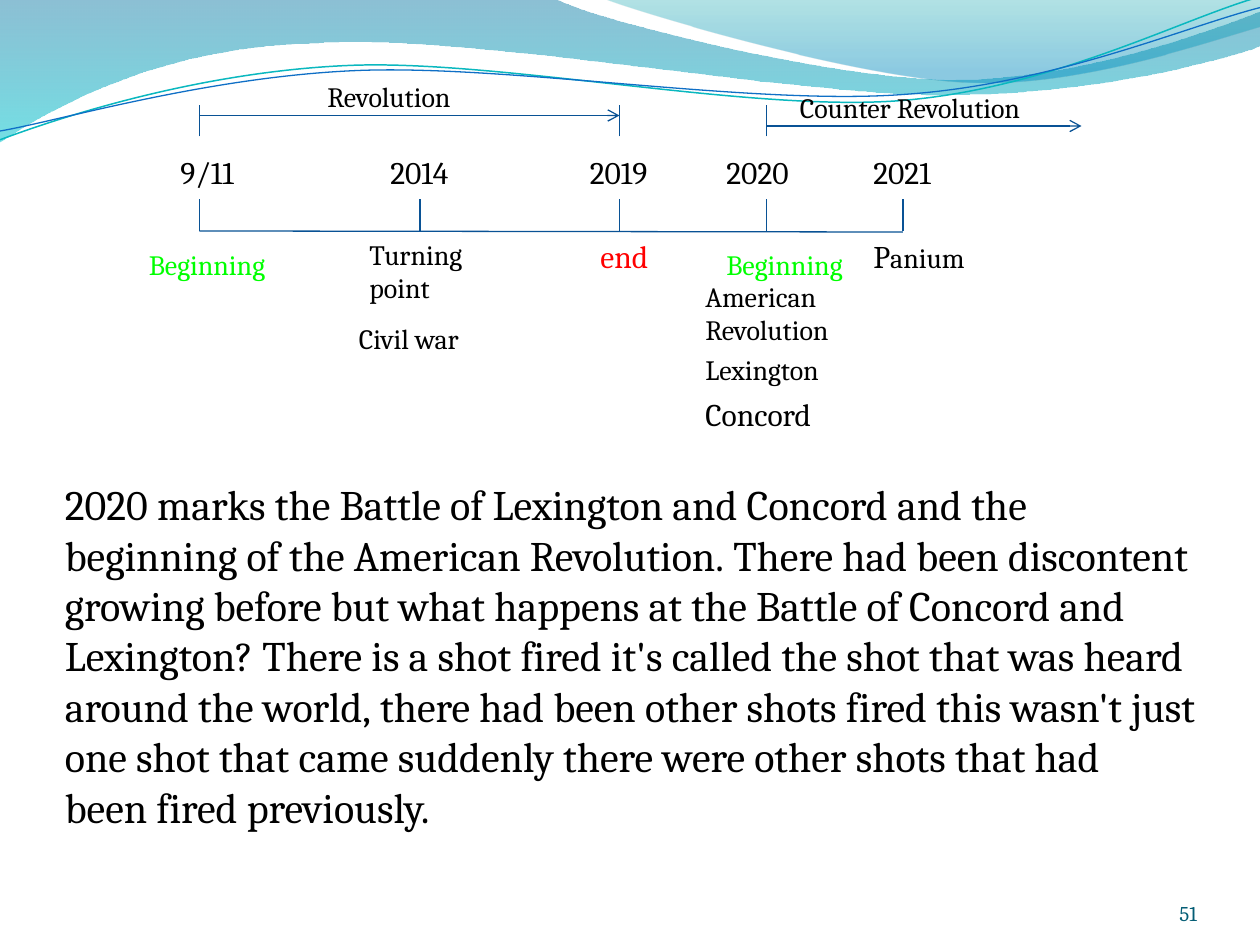
import dataclasses
import math
import pptx
import pptx.util
import pptx.dml.color
import pptx.enum.text
import pptx.oxml
import pptx.oxml.ns
import lxml.etree


@dataclasses.dataclass(frozen=True)
class Theme:
    font: str = "Cambria"
    ink: str = "000000"
    start: str = "00FF00"
    end: str = "FF0000"
    rule: str = "095295"
    number: str = "045D75"
    small: int = 16
    medium: int = 18
    body: int = 24
    footer: int = 12


THEME = Theme()
ALIGN = pptx.enum.text.PP_ALIGN
ANCHOR = pptx.enum.text.MSO_ANCHOR
AUTO = pptx.enum.text.MSO_AUTO_SIZE

# Timeline columns; the grid is 120 columns by 90 rows
ATTACK, TURN, FINISH, RESTART, PANIUM = 19, 40, 59, 73, 86
AXIS = 22
TICK = 3

# Wave paths in inches: start, then lines (1 point) and curves (3 points)
UPPER_WAVE = [[(0, 0)], [(4.4, -0.01)],
              [(4.76, 0.17), (6.64, 0.63), (7.58, 0.63)],
              [(8.53, 0.63), (9.58, 0.26), (10, 0.09)], [(10.01, 0.36)],
              [(9.83, 0.44), (8.7, 0.76), (7.46, 0.75)],
              [(6.22, 0.75), (3.82, 0.28), (2.57, 0.34)],
              [(1.29, 0.36), (0.46, 0.83), (-0.01, 1.13)], [(0, 0)]]
RIGHT_WAVE = [[(4.79, -0.01)], [(5.09, 0.11), (6.82, 0.62), (7.69, 0.65)],
              [(8.56, 0.69), (9.61, 0.32), (10, 0.21)], [(10, 0)],
              [(4.79, -0.01)]]
TEAL_CURVE = [[(0, 1.11)], [(0.48, 0.93), (1.58, 0.57), (2.77, 0.52)],
              [(3.95, 0.47), (5.93, 0.89), (7.13, 0.8)],
              [(8.33, 0.71), (9.38, 0.15), (9.98, -0.02)]]
BLUE_CURVE = [[(0, 1.04)], [(0.47, 0.96), (1.64, 0.61), (2.83, 0.56)],
              [(4.03, 0.51), (5.97, 0.84), (7.17, 0.75)],
              [(8.36, 0.67), (9.41, 0.21), (10, 0.06)]]
CURVE_TILT = -2.7

# A tilde marks a space that does not break
STORY = (
    "2020 marks the Battle of~Lexington and Concord and the "
    "beginning~of the American Revolution.~There had been discontent "
    "growing before~but what happens at the Battle of Concord and "
    "Lexington? There is a shot~fired~it's~called the shot that "
    "was~heard around the world,~there had been other shots fired "
    "this~wasn't~just one shot that came suddenly~there were other "
    "shots that had been~fired previously.").replace("~", chr(160))


def rgb(code):
    return pptx.dml.color.RGBColor.from_string(code)


def grid(units):
    return pptx.util.Inches(units / 12)


def add_child(parent, tag, **attributes):
    return lxml.etree.SubElement(parent, pptx.oxml.ns.qn(tag), attributes)


def add_text(slide, box, *runs, size=THEME.small, color=THEME.ink,
             align=ALIGN.LEFT, anchor=ANCHOR.TOP, grow=True, inset=None):
    """Put runs in a grid box; a run is a string or (string, size)."""
    label = slide.shapes.add_textbox(*map(grid, box))
    frame = label.text_frame
    frame.word_wrap = True
    frame.auto_size = AUTO.SHAPE_TO_FIT_TEXT if grow else AUTO.NONE
    frame.vertical_anchor = anchor
    if inset is not None:
        frame.margin_left = frame.margin_right = inset
        frame.margin_top = frame.margin_bottom = inset
    paragraph = frame.paragraphs[0]
    paragraph.alignment = align
    for item in runs:
        words, points = item if isinstance(item, tuple) else (item, size)
        run = paragraph.add_run()
        run.text = words
        run.font.name = THEME.font
        run.font.size = pptx.util.Pt(points)
        run.font.color.rgb = rgb(color)


def add_rule(slide, x1, y1, x2, y2, arrow=False):
    rule = slide.shapes.add_connector(1, *map(grid, (x1, y1, x2, y2)))
    rule.line.color.rgb = rgb(THEME.rule)
    rule.line.width = pptx.util.Pt(0.75)
    properties = rule._element.spPr
    if arrow:
        outline = properties.find(pptx.oxml.ns.qn("a:ln"))
        add_child(outline, "a:tailEnd", type="arrow")
    add_child(properties, "a:effectLst")


def add_outline(slide, box, route, tilt=0, close=False):
    """Draw lines and true curves in a box, turned by tilt degrees."""
    left, top, width, height = map(pptx.util.Inches, box)
    builder = slide.shapes.build_freeform(left, top)
    builder.add_line_segments([(left + width, top + height)], close=close)
    outline = builder.convert_to_shape()
    outline.shadow.inherit = False
    outline.rotation = tilt % 360

    # The route is as seen, so turn it back into the frame of the box
    cos, sin = math.cos(math.radians(-tilt)), math.sin(math.radians(-tilt))
    middle_x, middle_y = box[0] + box[2] / 2, box[1] + box[3] / 2
    track = outline._element.spPr.find(".//" + pptx.oxml.ns.qn("a:path"))
    for old in list(track):
        track.remove(old)
    for index, segment in enumerate(route):
        tag = "a:cubicBezTo" if len(segment) == 3 else "a:lnTo"
        step = add_child(track, tag if index else "a:moveTo")
        for x, y in segment:
            x, y = x - middle_x, y - middle_y
            across = pptx.util.Inches(x * cos - y * sin + box[2] / 2)
            down = pptx.util.Inches(x * sin + y * cos + box[3] / 2)
            add_child(step, "a:pt", x=str(int(across)), y=str(int(down)))
    if close:
        add_child(track, "a:close")
    return outline


def add_wave(slide, box, route, stops):
    """Fill a wave downwards; a stop is (position %, colour, opacity %)."""
    wave = add_outline(slide, box, route, close=True)
    wave.line.fill.background()
    wave.fill.gradient()
    wave.fill.gradient_angle = 270
    marks = wave._element.spPr.findall(".//" + pptx.oxml.ns.qn("a:gs"))
    for stop, mark, (position, color, opacity) in zip(
            wave.fill.gradient_stops, marks, stops):
        stop.color.rgb = rgb(color)
        mark.set("pos", str(position * 1000))
        add_child(mark[0], "a:alpha", val=str(opacity * 1000))


def add_curve(slide, box, route, color, width):
    curve = add_outline(slide, box, route, tilt=CURVE_TILT)
    curve.fill.background()
    curve.line.color.rgb = rgb(color)
    curve.line.width = pptx.util.Pt(width)


def add_banner(slide):
    add_wave(slide, (-0.01, -0.01, 10.02, 1.14), UPPER_WAVE,
             [(0, "0074A1", 45), (100, "00C6CF", 55)])
    add_wave(slide, (4.79, -0.01, 5.21, 0.7), RIGHT_WAVE,
             [(0, "00A1A9", 30), (80, "008BBF", 45)])
    add_curve(slide, (-0.02, 0.22, 10.02, 0.71), TEAL_CURVE, "0AB8BF", 0.85)
    add_curve(slide, (-0.02, 0.3, 10.03, 0.58), BLUE_CURVE, "0F6FC6", 0.75)


def add_timeline(slide):
    # Axis, ticks and the spans above it
    add_rule(slide, ATTACK, AXIS, PANIUM, AXIS + 0.1)
    for column in (ATTACK, TURN, FINISH, RESTART, PANIUM):
        add_rule(slide, column, AXIS, column, AXIS - TICK)
    for column in (ATTACK, FINISH, RESTART):
        add_rule(slide, column, 13, column, 13 - TICK)
    add_rule(slide, ATTACK, 11, FINISH, 11, arrow=True)
    add_rule(slide, RESTART, 12, 103, 12, arrow=True)
    add_text(slide, (30, 7, 19, 4.4), "Revolution")
    add_text(slide, (75, 8, 28, 4.4), "Counter Revolution")

    # Dates
    for left, width, date in ((16, 9, "9/11"), (36, 11, "2014"),
                              (55, 11, "2019"), (68, 14, "2020"),
                              (82, 11, "2021")):
        add_text(slide, (left, 14, width, 5), date, size=THEME.medium)

    # Events below the axis
    for left, width in ((13, 17), (68, 20)):
        add_text(slide, (left, 23, width, 4.4), "Beginning",
                 color=THEME.start)
    add_text(slide, (56, AXIS, 10, 4.8), "end", size=THEME.medium,
             color=THEME.end)
    add_text(slide, (82, AXIS, 14, 5), ("P", THEME.medium), "anium")
    add_text(slide, (34, AXIS, 15, 7.7), "Turning point")
    add_text(slide, (33, 30, 16, 4.4), "Civil war")
    add_text(slide, (66, 26, 18, 7.7), "American Revolution")
    add_text(slide, (66, 33, 16, 4.4), "Lexington")
    add_text(slide, (66, 37, 15, 5), "Concord", size=THEME.medium)


def main():
    deck = pptx.Presentation()
    deck.slide_width = grid(120)
    deck.slide_height = grid(90)
    slide = deck.slides.add_slide(deck.slide_layouts[6])
    add_banner(slide)
    add_timeline(slide)
    add_text(slide, (5, 45, 110, 38.8), STORY, size=THEME.body)
    add_text(slide, (104, 83.4, 10, 4.8), "51", size=THEME.footer,
             color=THEME.number, align=ALIGN.RIGHT, anchor=ANCHOR.BOTTOM,
             grow=False, inset=0)
    deck.save("out.pptx")


if __name__ == "__main__":
    main()
